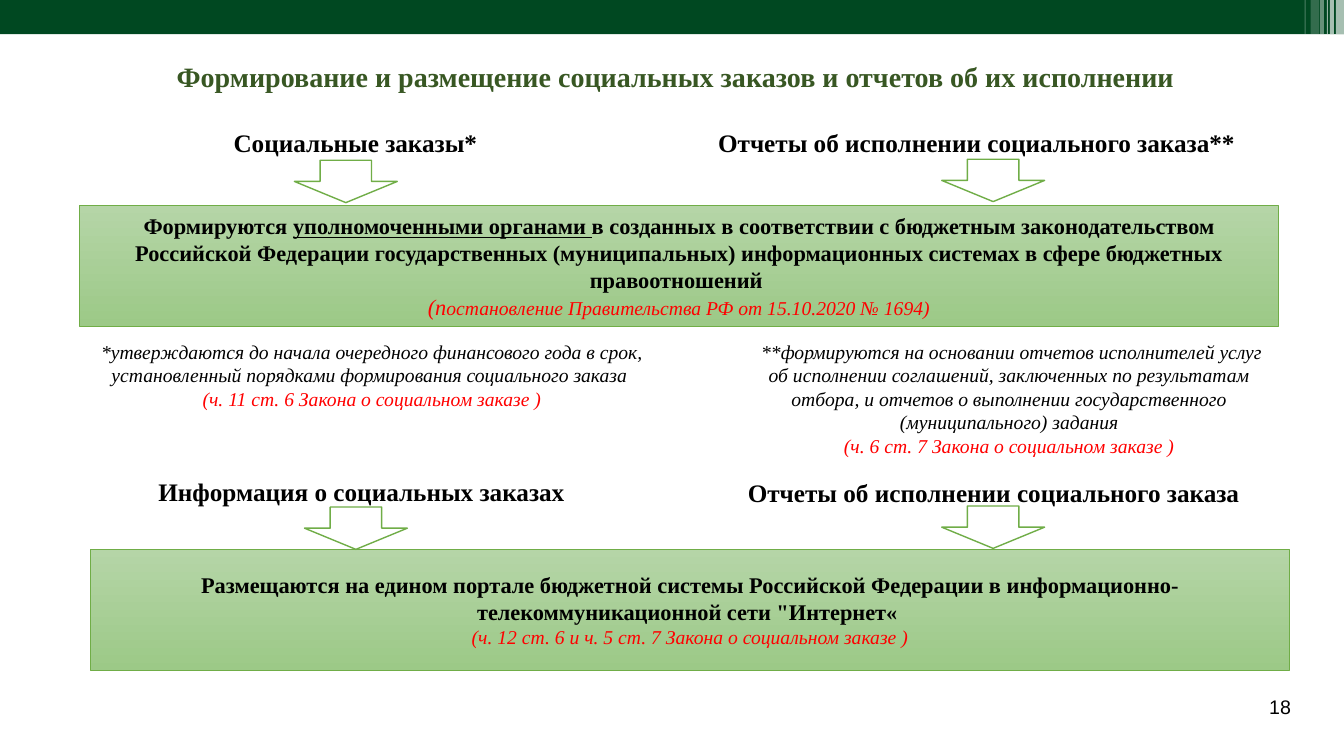
from lxml import etree
from pptx import Presentation
from pptx.dml.color import RGBColor
from pptx.enum.shapes import MSO_SHAPE
from pptx.enum.text import MSO_ANCHOR, PP_ALIGN
from pptx.oxml.ns import qn
from pptx.util import Inches, Pt

RECT = MSO_SHAPE.RECTANGLE
ARROW = MSO_SHAPE.DOWN_ARROW
CENTER = PP_ALIGN.CENTER
LEFT = PP_ALIGN.LEFT
MIDDLE = MSO_ANCHOR.MIDDLE
TOP = MSO_ANCHOR.TOP

WHITE = RGBColor(0xFF, 0xFF, 0xFF)
BLACK = RGBColor(0, 0, 0)
RED = RGBColor(0xFF, 0, 0)
DARK = RGBColor(0x00, 0x48, 0x21)
OLIVE = RGBColor(0x38, 0x57, 0x23)
GREEN = RGBColor(0x70, 0xAD, 0x47)
PALE = RGBColor(0xB5, 0xD5, 0xA7)
DEEP = RGBColor(0x9C, 0xC9, 0x87)

SERIF = "Times New Roman"
BREAK = "\n"
CITE = {"color": RED, "size": 14, "bold": False, "italic": True}


def write(shape, *parts, align=CENTER, anchor=TOP, **base):
    """Fill a shape with one paragraph; a part is text or (text, format)."""
    frame = shape.text_frame
    frame.word_wrap = True
    frame.vertical_anchor = anchor
    para = frame.paragraphs[0]
    para.alignment = align
    for part in parts:
        if part == BREAK:
            para.add_line_break()
            continue
        words, extra = (part, {}) if isinstance(part, str) else part
        form = {"size": 14, "color": BLACK, "name": SERIF} | base | extra
        run = para.add_run()
        run.text = words
        run.font.size = Pt(form.pop("size"))
        run.font.color.rgb = form.pop("color")
        for key, value in form.items():
            setattr(run.font, key, value)


def label(slide, box, *parts, **form):
    """Add a text box."""
    write(slide.shapes.add_textbox(*map(Inches, box)), *parts, **form)


def block(slide, kind, box, fill=None, line=None, width=1, alpha=None):
    """Add a preset shape with its fill and outline."""
    shape = slide.shapes.add_shape(kind, *map(Inches, box))
    shape.shadow.inherit = False
    if fill is not None:
        shape.fill.solid()
        shape.fill.fore_color.rgb = fill
    if alpha is not None:
        tint = shape.fill._xPr.find(".//" + qn("a:srgbClr"))
        etree.SubElement(tint, qn("a:alpha")).set("val", str(alpha * 1000))
    if line is None:
        shape.line.fill.background()
    else:
        shape.line.color.rgb = line
        shape.line.width = Pt(width)
    return shape


def header(slide, box):
    """Draw the dark band with pale stripes at its right end."""
    left, top, width, height = box
    block(slide, RECT, box, DARK)
    stripes = [(0.08, 0.08, 65), (0.14, 0.04, 65), (0.17, 0.01, 60),
               (0.24, 0.04, 40), (0.33, 0.08, 20), (0.39, 0.01, 30)]
    for back, wide, alpha in stripes:
        spot = (left + width - back, top, wide, height)
        block(slide, RECT, spot, WHITE, alpha=alpha)


def panel(slide, box, *parts):
    """Draw a green gradient panel with bold text."""
    shape = block(slide, RECT, box, line=GREEN, width=0.5)
    shape.fill.gradient()
    shape.fill.gradient_angle = 270
    for stop, color in zip(shape.fill.gradient_stops, (PALE, DEEP)):
        stop.color.rgb = color
    write(shape, *parts, anchor=MIDDLE, size=16, bold=True)


def section(slide, box, heads, arrows, parts):
    """Place two headings and arrows above a panel."""
    left, top, width, height = box
    for words, x, y, wide in heads:
        label(slide, (left + x, top + y, wide, 0.4), words, size=18, bold=True)
    panel(slide, box, *parts)
    for x, y in arrows:
        block(slide, ARROW, (left + x, top + y, 1.02, 0.42), WHITE, GREEN)


def note(slide, box, words, cite):
    """Write an italic note followed by its red citation."""
    label(slide, box, words, BREAK, (cite, {"color": RED}), italic=True)


def main():
    """Build and save the slide."""
    deck = Presentation()
    deck.slide_width, deck.slide_height = Inches(13.33), Inches(7.5)
    slide = deck.slides.add_slide(deck.slide_layouts[6])
    header(slide, (0, 0, 13.33, 0.34))
    label(slide, (1.57, 0.54, 10.33, 0.44),
          "Формирование и размещение социальных заказов и отчетов "
          "об их исполнении ", size=20, bold=True, color=OLIVE)
    section(
        slide, (0.79, 2.04, 11.89, 1.2),
        [("Социальные заказы*", 0.39, -0.83, 4.69),
         ("Отчеты об исполнении социального заказа**", 6.2, -0.83, 5.39)],
        [(2.13, -0.45), (8.55, -0.46)],
        ["Формируются ",
         ("уполномоченными органами ", {"underline": True}),
         "в созданных в соответствии с бюджетным законодательством "
         "Российской Федерации государственных (муниципальных) "
         "информационных системах в сфере бюджетных правоотношений ",
         BREAK, ("(п", CITE | {"size": 16}),
         ("остановление Правительства РФ от 15.10.2020 № 1694)", CITE)])
    note(slide, (0.9, 3.32, 5.58, 0.81),
         "*утверждаются до начала очередного финансового года в срок, "
         "установленный порядками формирования социального заказа ",
         "(ч. 11 ст. 6 Закона о социальном заказе )")
    note(slide, (7.34, 3.32, 5.34, 1.51),
         " **формируются на основании отчетов исполнителей услуг "
         "об исполнении соглашений, заключенных по результатам отбора, "
         "и отчетов о выполнении государственного (муниципального) задания",
         "(ч. 6 ст. 7 Закона о социальном заказе )")
    section(
        slide, (0.9, 5.45, 11.89, 1.2),
        [("Информация о социальных заказах", 0.34, -0.77, 4.69),
         ("Отчеты об исполнении социального заказа", 6.26, -0.76, 5.39)],
        [(2.12, -0.42), (8.44, -0.43)],
        ["Размещаются на едином портале бюджетной системы Российской "
         "Федерации в информационно-телекоммуникационной сети "
         "\"Интернет« ",
         BREAK,
         ("(ч. 12 ст. 6 и ч. 5 ст. 7 Закона о социальном заказе )", CITE)])
    label(slide, (12.49, 6.84, 0.47, 0.34), "18", align=LEFT, name="Arial")
    deck.save("out.pptx")


if __name__ == "__main__":
    main()
